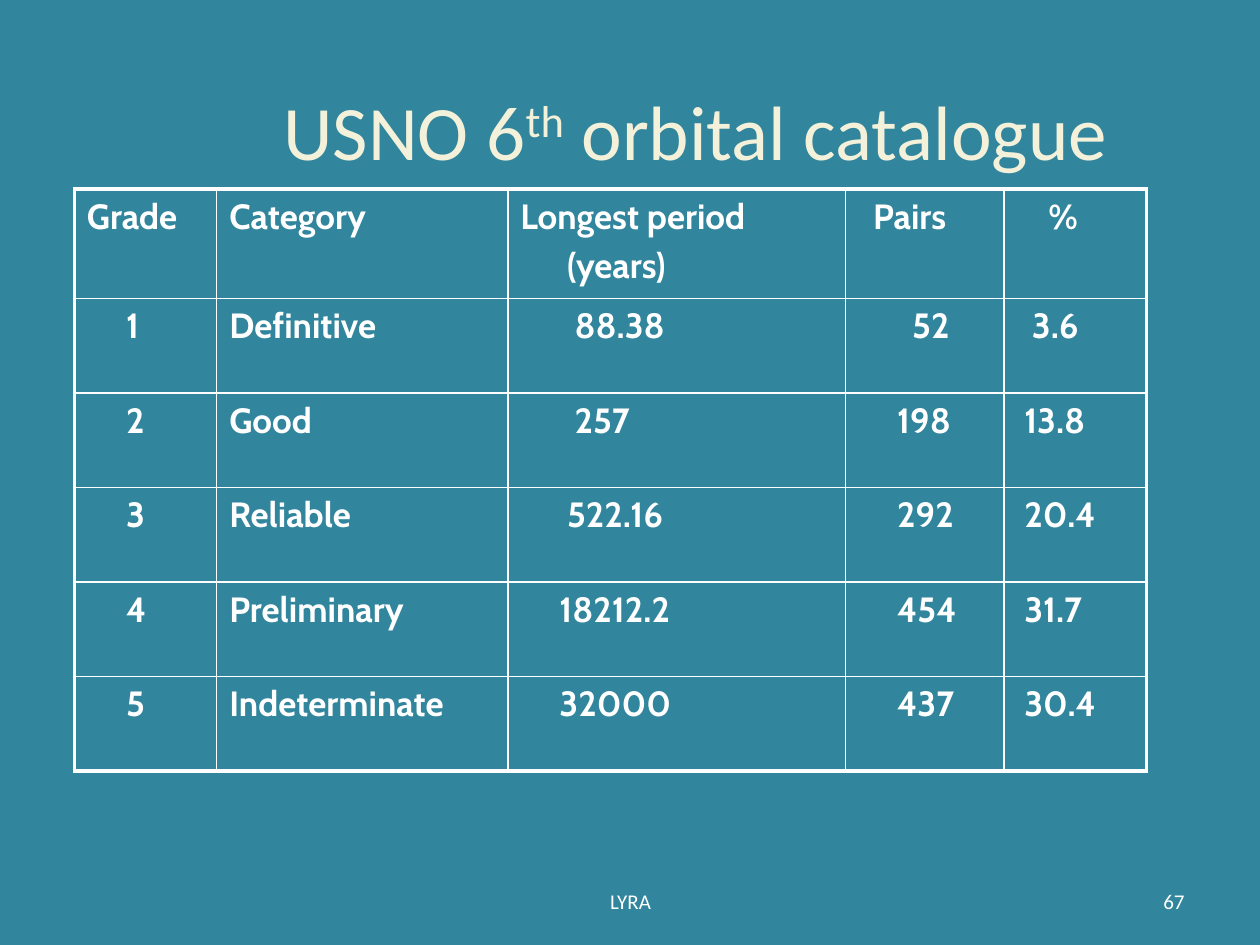
from pptx import Presentation
from pptx.dml.color import RGBColor
from pptx.enum.text import MSO_ANCHOR, PP_ALIGN
from pptx.oxml import parse_xml
from pptx.oxml.ns import nsdecls
from pptx.util import Inches, Pt

TEAL = RGBColor(0x31, 0x85, 0x9C)
CREAM = RGBColor(0xF4, 0xF1, 0xDA)
WHITE = RGBColor(0xFF, 0xFF, 0xFF)

TITLE_FONT = {"name": "Calibri", "size": Pt(44), "bold": False}
TABLE_FONT = {"name": "Cabin", "size": Pt(20), "bold": True}
FOOTER_FONT = {"name": "Calibri", "size": Pt(12), "bold": False}


def format_font(font, values, color):
    for name, value in values.items():
        setattr(font, name, value)
    font.color.rgb = color


def add_borders(cell, widths):
    """Draw the left, right, top and bottom borders, with widths in points."""
    properties = cell._tc.get_or_add_tcPr()
    for index, (side, width) in enumerate(zip("LRTB", widths)):
        properties.insert(index, parse_xml(
            f'<a:ln{side} {nsdecls("a")} w="{Pt(width)}"><a:solidFill>'
            f'<a:srgbClr val="{WHITE}"/></a:solidFill></a:ln{side}>'))


presentation = Presentation()
presentation.slide_width = Inches(10)
presentation.slide_height = Inches(7.5)
slide = presentation.slides.add_slide(presentation.slide_layouts[5])
slide.background.fill.solid()
slide.background.fill.fore_color.rgb = TEAL

# Title
title = slide.shapes.title
title.left, title.top = Inches(1.26), Inches(0.23)
title.width, title.height = Inches(8.52), Inches(1.6)
title.text_frame.vertical_anchor = MSO_ANCHOR.MIDDLE
paragraph = title.text_frame.paragraphs[0]
paragraph.alignment = PP_ALIGN.CENTER
for text, baseline in (("USNO 6", 0), ("th", 30), (" orbital catalogue", 0)):
    run = paragraph.add_run()
    run.text = text
    format_font(run.font, TITLE_FONT, CREAM)
    if baseline:
        run.font._element.set("baseline", str(baseline * 1000))

# Catalogue table: each paragraph is its text and its left indent in inches
column_widths = (1.13, 2.31, 2.68, 1.26, 1.13)
row_heights = (0.87,) + (0.75,) * 5
header = [
    [("Grade", 0)],
    [("Category", 0)],
    [("Longest period", 0), ("(years)", 0.37)],
    [("Pairs", 0.12)],
    [("%", 0.25)],
]
grades = [
    ("Definitive", ("88.38", 0.43), ("52", 0.43), ("3.6", 0.12)),
    ("Good", ("257", 0.43), ("198", 0.31), ("13.8", 0.06)),
    ("Reliable", ("522.16", 0.37), ("292", 0.31), ("20.4", 0.06)),
    ("Preliminary", ("18212.2", 0.31), ("454", 0.31), ("31.7", 0.06)),
    ("Indeterminate", ("32000", 0.31), ("437", 0.31), ("30.4", 0.06)),
]
rows = [header]
for grade, (category, *numbers) in enumerate(grades, 1):
    rows.append([[(str(grade), 0.31)], [(category, 0)]] + [[number] for number in numbers])

table = slide.shapes.add_table(
    len(rows), len(column_widths), Inches(0.59), Inches(1.5),
    Inches(sum(column_widths)), Inches(sum(row_heights))).table
table.first_row = table.horz_banding = False
for column, width in zip(table.columns, column_widths):
    column.width = Inches(width)
for row, height in zip(table.rows, row_heights):
    row.height = Inches(height)

last_row, last_column = len(rows) - 1, len(column_widths) - 1
for row_index, row in enumerate(rows):
    for column_index, lines in enumerate(row):
        cell = table.cell(row_index, column_index)
        cell.fill.background()
        outer = (column_index == 0, column_index == last_column,
                 row_index == 0, row_index == last_row)
        add_borders(cell, [2.25 if edge else 1 for edge in outer])
        cell.text = "\n".join(text for text, indent in lines)
        for index, (text, indent) in enumerate(lines):
            paragraph = cell.text_frame.paragraphs[index]
            paragraph._p.get_or_add_pPr().set("marL", str(Inches(indent)))
            if index:
                paragraph.space_before = Pt(4)
            format_font(paragraph.runs[0].font, TABLE_FONT, WHITE)

# Footer and slide number
for text, left, width, alignment in (
        ("LYRA", 3.42, 3.17, PP_ALIGN.CENTER),
        ("67", 7.17, 2.33, PP_ALIGN.RIGHT)):
    footer = slide.shapes.add_textbox(Inches(left), Inches(6.95), Inches(width), Inches(0.4))
    footer.text_frame.word_wrap = True
    footer.text_frame.vertical_anchor = MSO_ANCHOR.MIDDLE
    paragraph = footer.text_frame.paragraphs[0]
    paragraph.text = text
    paragraph.alignment = alignment
    format_font(paragraph.runs[0].font, FOOTER_FONT, WHITE)

presentation.save("out.pptx")
